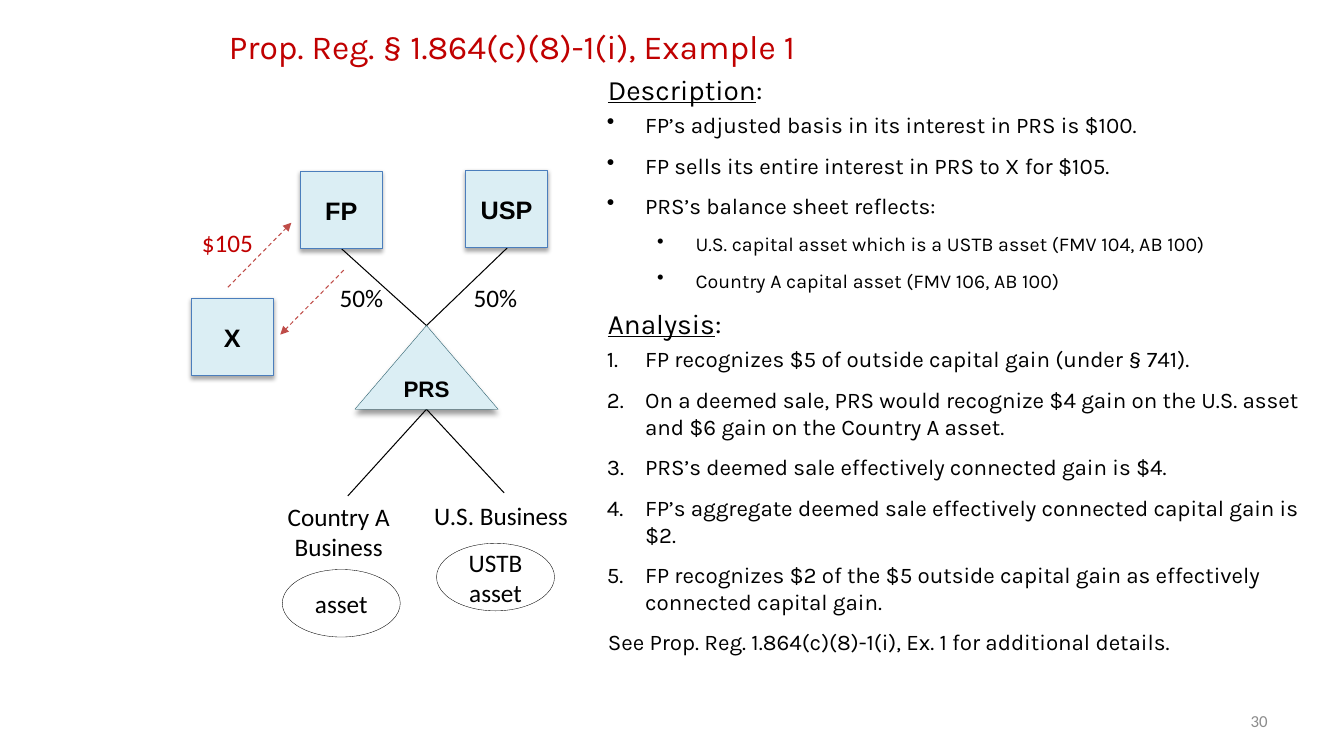
from dataclasses import dataclass

from lxml.etree import SubElement
from pptx import Presentation
from pptx.dml.color import RGBColor
from pptx.enum.dml import MSO_LINE
from pptx.enum.shapes import MSO_CONNECTOR, MSO_SHAPE
from pptx.enum.text import MSO_ANCHOR, PP_ALIGN
from pptx.oxml.ns import qn
from pptx.util import Pt

PX = 9144  # 100 px to the inch


@dataclass(frozen=True)
class Theme:
    ink: str = "000000"
    red: str = "C00000"
    arrow: str = "BF4C48"
    pale: str = "DBEEF4"
    blue: str = "4B7EBC"
    teal: str = "215968"
    white: str = "FFFFFF"
    grey: str = "8C8C8C"
    prose: str = "Karla"
    label: str = "Calibri"
    node: str = "Arial"
    title: int = 24
    head: int = 20
    body: int = 16
    sub: int = 14
    mark: int = 18
    foot: int = 12


T = Theme()

NOTES = [
    ("head", "Description"),
    ("dot", "FP’s adjusted basis in its interest in PRS is $100."),
    ("dot", "FP sells its entire interest in PRS to X for $105."),
    ("dot", "PRS’s balance sheet reflects:"),
    ("sub", "U.S. capital asset which is a USTB asset (FMV 104, AB 100)"),
    ("sub", "Country A capital asset (FMV 106, AB 100)"),
    ("head", "Analysis"),
    ("num", "FP recognizes $5 of outside capital gain (under § 741)."),
    ("num", "On a deemed sale, PRS would recognize $4 gain on the U.S. asset "
            "and $6 gain on the Country A asset."),
    ("num", "PRS’s deemed sale effectively connected gain is $4."),
    ("num", "FP’s aggregate deemed sale effectively connected capital gain is $2."),
    ("num", "FP recognizes $2 of the $5 outside capital gain as effectively "
            "connected capital gain."),
    ("end", "See Prop. Reg. 1.864(c)(8)-1(i), Ex. 1 for additional details."),
]

# kind: type size, left margin, hanging indent, space after, bullet tag, its attribute
KINDS = {
    "head": (T.head, 1, 0, 0, "buNone", {}),
    "dot": (T.body, 38, -38, 6, "buChar", {"char": "•"}),
    "sub": (T.sub, 88, -38, 6, "buChar", {"char": "•"}),
    "num": (T.body, 38, -38, 6, "buAutoNum", {"type": "arabicPeriod"}),
    "end": (T.body, 1, 0, 6, "buNone", {}),
}


def emu(*sizes):
    return [size * PX for size in sizes]


def style(frame, size, font, color=T.ink, bold=False, align=PP_ALIGN.CENTER):
    for para in frame.paragraphs:
        para.alignment = align
        for run in para.runs:
            run.font.size = Pt(size)
            run.font.name = font
            run.font.bold = bold
            run.font.color.rgb = RGBColor.from_string(color)


def text(slide, box, words, size=T.mark, color=T.ink, align=PP_ALIGN.CENTER,
         anchor=MSO_ANCHOR.TOP):
    frame = slide.shapes.add_textbox(*emu(*box)).text_frame
    frame.word_wrap = True
    frame.vertical_anchor = anchor
    frame.text = words
    style(frame, size, T.label, color, align=align)


def shape(slide, kind, box, words, fill, edge, width, size=T.mark, font=T.label,
          bold=False):
    item = slide.shapes.add_shape(kind, *emu(*box))
    item.shadow.inherit = False
    item.fill.solid()
    item.fill.fore_color.rgb = RGBColor.from_string(fill)
    item.line.color.rgb = RGBColor.from_string(edge)
    item.line.width = Pt(width)
    item.text_frame.text = words
    style(item.text_frame, size, font, bold=bold)
    return item


def shade(item, alpha, blur, dist):
    """Cast a soft black shadow straight down."""
    effects = item.element.spPr.find(qn("a:effectLst"))
    cast = SubElement(effects, qn("a:outerShdw"), blurRad=str(Pt(blur)),
                      dist=str(Pt(dist)), dir="5400000", rotWithShape="0")
    tint = SubElement(cast, qn("a:srgbClr"), val=T.ink)
    SubElement(tint, qn("a:alpha"), val=str(alpha * 1000))


def link(slide, start, end, color=T.ink, arrow=False):
    wire = slide.shapes.add_connector(MSO_CONNECTOR.STRAIGHT, *emu(*start, *end))
    wire.line.color.rgb = RGBColor.from_string(color)
    wire.line.width = Pt(0.75)
    if arrow:
        wire.line.dash_style = MSO_LINE.DASH
        SubElement(wire.line._get_or_add_ln(), qn("a:tailEnd"), type="triangle")
    SubElement(wire.element.spPr, qn("a:effectLst"))


def heading(slide, box, words):
    title = slide.shapes.title
    title.left, title.top, title.width, title.height = emu(*box)
    frame = title.text_frame
    frame.text = words
    frame.vertical_anchor = MSO_ANCHOR.MIDDLE
    style(frame, T.title, T.prose, T.red, align=PP_ALIGN.LEFT)


def notes(slide, box):
    frame = slide.shapes.add_textbox(*emu(*box)).text_frame
    frame.word_wrap = True
    for at, (kind, words) in enumerate(NOTES):
        size, left, hang, after, tag, attrs = KINDS[kind]
        para = frame.paragraphs[0] if at == 0 else frame.add_paragraph()
        para.text = words
        if kind == "head":
            para.runs[0].font.underline = True
            para.add_run().text = ":"
        para.level = 1 if kind == "sub" else 0
        para.space_before = Pt(size * 0.23)
        para.space_after = Pt(after)
        props = para._p.get_or_add_pPr()
        props.set("marL", str(left * PX))
        props.set("indent", str(hang * PX))
        SubElement(props, qn("a:" + tag), attrs)
        style_size = size
        for run in para.runs:
            run.font.size = Pt(style_size)
            run.font.name = T.prose
            run.font.color.rgb = RGBColor.from_string(T.ink)


def diagram(slide, box):
    """Draw owners, partnership, businesses and the sale of the interest."""
    x, y = box[:2]

    def spot(left, top, *size):
        return (x + left, y + top, *size)

    peak, base = spot(256, 154), spot(256, 237)
    for start, end in ((spot(172, 78), peak), (spot(336, 77), peak),
                       (base, spot(178, 323)), (base, spot(333, 320))):
        link(slide, start, end)
    for start, end in ((spot(174, 99), spot(111, 163)),
                       (spot(59, 116), spot(122, 52))):
        link(slide, start, end, T.arrow, arrow=True)

    firm = shape(slide, MSO_SHAPE.ISOSCELES_TRIANGLE, spot(185, 154, 142, 83), "PRS",
                 T.pale, T.teal, 0.25, T.body, T.node, True)
    shade(firm, 40, 4, 3)
    for name, left, top in (("FP", 131, 1), ("USP", 295, 0), ("X", 23, 127)):
        owner = shape(slide, MSO_SHAPE.RECTANGLE, spot(left, top, 81, 77), name,
                      T.pale, T.blue, 0.75, T.mark, T.node, True)
        shade(owner, 35, 3.1, 1.8)

    for words, left, top, wide, high, color in (
            ("50%", 133, 106, 117, 40, T.ink),
            ("50%", 266, 106, 117, 40, T.ink),
            ("$105", 0, 52, 117, 40, T.red),
            ("Country A Business", 91, 323, 156, 71, T.ink),
            ("U.S. Business", 252, 322, 156, 40, T.ink)):
        text(slide, spot(left, top, wide, high), words, color=color)
    for words, left, top in (("USTB\nasset", 266, 370), ("asset", 113, 396)):
        shape(slide, MSO_SHAPE.OVAL, spot(left, top, 117, 67), words,
              T.white, T.ink, 0.25)


def main():
    deck = Presentation()
    deck.slide_width, deck.slide_height = emu(1333, 750)
    slide = deck.slides.add_slide(deck.slide_layouts[5])
    heading(slide, (217, 1, 900, 89), "Prop. Reg. § 1.864(c)(8)-1(i), Example 1")
    notes(slide, (592, 67, 719, 658))
    diagram(slide, (167, 169, 408, 463))
    text(slide, (956, 695, 311, 40), "30", T.foot, T.grey, PP_ALIGN.RIGHT,
         MSO_ANCHOR.MIDDLE)
    deck.save("out.pptx")


if __name__ == "__main__":
    main()
